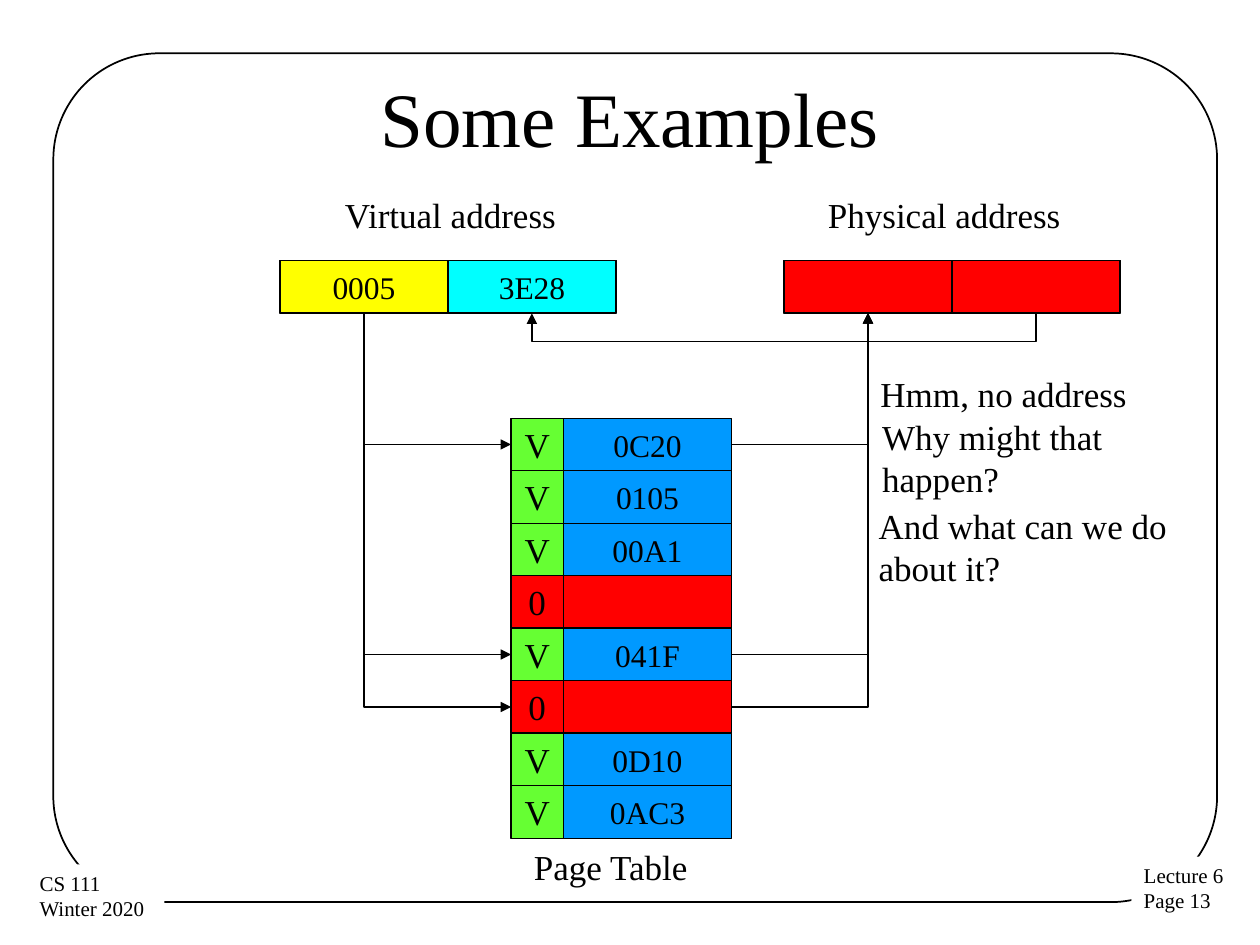
import lxml.etree
import pptx
import pptx.dml.color
import pptx.enum.shapes
import pptx.enum.text
import pptx.oxml.ns
import pptx.util

Pt = pptx.util.Pt
qn = pptx.oxml.ns.qn
SHAPES = pptx.enum.shapes.MSO_SHAPE
ANCHOR = pptx.enum.text.MSO_ANCHOR
ALIGN = pptx.enum.text.PP_ALIGN
AUTO = pptx.enum.text.MSO_AUTO_SIZE

BLACK, WHITE, RED = "000000", "FFFFFF", "FF0000"
YELLOW, CYAN, BLUE, GREEN = "FFFF00", "00FFFF", "0099FF", "66FF33"
TOP, LEFT, BOTTOM, RIGHT = range(4)
CELL_WIDTH, CELL_HEIGHT = 96, 30
ADDRESS_TOP, TABLE_LEFT, TABLE_TOP = 149, 292, 239
FRAMES = ["0C20", "0105", "00A1", "", "041F", "", "0D10", "0AC3"]
LOOKED_UP = [0, 4, 5]

CAPTIONS = [
    ("Virtual address", 190, 107, 138, 32, False),
    ("Physical address", 466, 107, 148, 32, False),
    ("Page Table", 298, 479.5, 104, 32, False),
    ("Hmm, no address", 496, 209.5, 156, 32, False),
    ("Why might that happen?", 497, 234, 187, 55.5, True),
    ("And what can we do about it?", 495, 285, 187, 55.5, True),
]
CORNERS = [
    ("Lecture 6\nPage 13", 646.5, 489.5, 61, 37),
    ("CS 111\nWinter 2020", 15.5, 494, 78.5, 37),
]


def rgb(colour):
    return pptx.dml.color.RGBColor.from_string(colour)


def apply(target, values):
    for name, value in values.items():
        setattr(target, name, value)


def write(frame, text, size, align, **layout):
    frame.text = text
    apply(frame, layout)
    for paragraph in frame.paragraphs:
        paragraph.alignment = align
        apply(paragraph.font, {"name": "Times New Roman", "size": Pt(size)})
        paragraph.font.color.rgb = rgb(BLACK)


def box(slide, kind, bounds, fill=None, line=0.75):
    shape = slide.shapes.add_shape(kind, *map(Pt, bounds))
    shape.shadow.inherit = False
    if fill:
        shape.fill.solid()
        shape.fill.fore_color.rgb = rgb(fill)
    else:
        shape.fill.background()
    if line:
        shape.line.color.rgb = rgb(BLACK)
        shape.line.width = Pt(line)
    else:
        shape.line.fill.background()
    return shape


def cell(slide, left, top, width, fill, text="", size=18):
    shape = box(slide, SHAPES.RECTANGLE, (left, top, width, CELL_HEIGHT), fill)
    if text:
        write(shape.text_frame, text, size, ALIGN.CENTER,
              word_wrap=False, vertical_anchor=ANCHOR.MIDDLE)
    return shape


def caption(slide, text, left, top, width, height, wrap):
    label = slide.shapes.add_textbox(*map(Pt, (left, top, width, height)))
    write(label.text_frame, text, 20, ALIGN.LEFT,
          word_wrap=wrap, auto_size=AUTO.SHAPE_TO_FIT_TEXT)


def corner(slide, text, *bounds):
    label = box(slide, SHAPES.RECTANGLE, bounds, WHITE, line=0)
    write(label.text_frame, text, 12, ALIGN.LEFT, word_wrap=False,
          vertical_anchor=ANCHOR.TOP, auto_size=AUTO.SHAPE_TO_FIT_TEXT)


def address(slide, left, parts):
    outline = (left, ADDRESS_TOP, 2 * CELL_WIDTH, CELL_HEIGHT)
    box(slide, SHAPES.RECTANGLE, outline)
    return [cell(slide, left + i * CELL_WIDTH, ADDRESS_TOP, CELL_WIDTH, fill, text)
            for i, (fill, text) in enumerate(parts)]


def page_table(slide):
    rows = []
    for i, frame in enumerate(FRAMES):
        top = TABLE_TOP + i * CELL_HEIGHT
        flag = cell(slide, TABLE_LEFT, top, CELL_HEIGHT,
                    GREEN if frame else RED, "V" if frame else "0", 20)
        value = cell(slide, TABLE_LEFT + CELL_HEIGHT, top, CELL_WIDTH,
                     BLUE if frame else RED, frame)
        rows.append((flag, value))
    return rows


def turn_downward(arrow):
    across, down = arrow.width, max(arrow.height, Pt(0.125))
    middle_x, middle_y = arrow.left + across // 2, arrow.top + down // 2
    apply(arrow, {"left": middle_x - down // 2, "top": middle_y - across // 2,
                  "width": down, "height": across})
    frame = arrow._element.spPr.find(qn("a:xfrm"))
    frame.set("rot", "16200000")
    frame.set("flipH", "1")


def bent_arrow(slide, source, source_side, target, target_side, drop=0):
    arrow = slide.shapes.add_connector(
        pptx.enum.shapes.MSO_CONNECTOR.ELBOW, 0, 0, 0, 0)
    arrow.begin_connect(source, source_side)
    arrow.end_connect(target, target_side)
    if source_side == BOTTOM:
        turn_downward(arrow)
    arrow.line.color.rgb = rgb(BLACK)
    arrow.line.width = Pt(0.75)
    properties = arrow._element.spPr
    geometry = properties.find(qn("a:prstGeom"))
    if drop:
        bend = lxml.etree.SubElement(geometry.find(qn("a:avLst")), qn("a:gd"))
        bend.set("name", "adj1")
        bend.set("fmla", f"val {round(Pt(drop) / arrow.width * 100000)}")
    else:
        geometry.set("prst", "bentConnector2")
    head = lxml.etree.SubElement(properties.find(qn("a:ln")), qn("a:tailEnd"))
    head.set("type", "triangle")
    lxml.etree.SubElement(properties, qn("a:effectLst"))


def main():
    deck = pptx.Presentation()
    apply(deck, {"slide_width": Pt(720), "slide_height": Pt(540)})
    slide = deck.slides.add_slide(deck.slide_layouts.get_by_name("Title Only"))

    border = box(slide, SHAPES.ROUNDED_RECTANGLE, (30.5, 30.5, 665, 485), line=1)
    border.adjustments[0] = 0.125
    for text, *bounds in CORNERS:
        corner(slide, text, *bounds)

    title = slide.shapes.title
    apply(title, {"left": Pt(36), "top": Pt(21.6), "width": Pt(648), "height": Pt(90)})
    write(title.text_frame, "Some Examples", 44, ALIGN.CENTER,
          vertical_anchor=ANCHOR.MIDDLE)
    slide.shapes._spTree.append(title._element)

    page, offset = address(slide, 160, [(YELLOW, "0005"), (CYAN, "3E28")])
    physical_page, physical_offset = address(slide, 448, [(RED, ""), (RED, "")])
    rows = page_table(slide)

    bent_arrow(slide, offset, BOTTOM, physical_offset, BOTTOM, drop=18)
    for index in LOOKED_UP:
        flag, value = rows[index]
        bent_arrow(slide, page, BOTTOM, flag, LEFT)
        bent_arrow(slide, value, RIGHT, physical_page, BOTTOM)

    for details in CAPTIONS:
        caption(slide, *details)
    deck.save("out.pptx")


if __name__ == "__main__":
    main()
